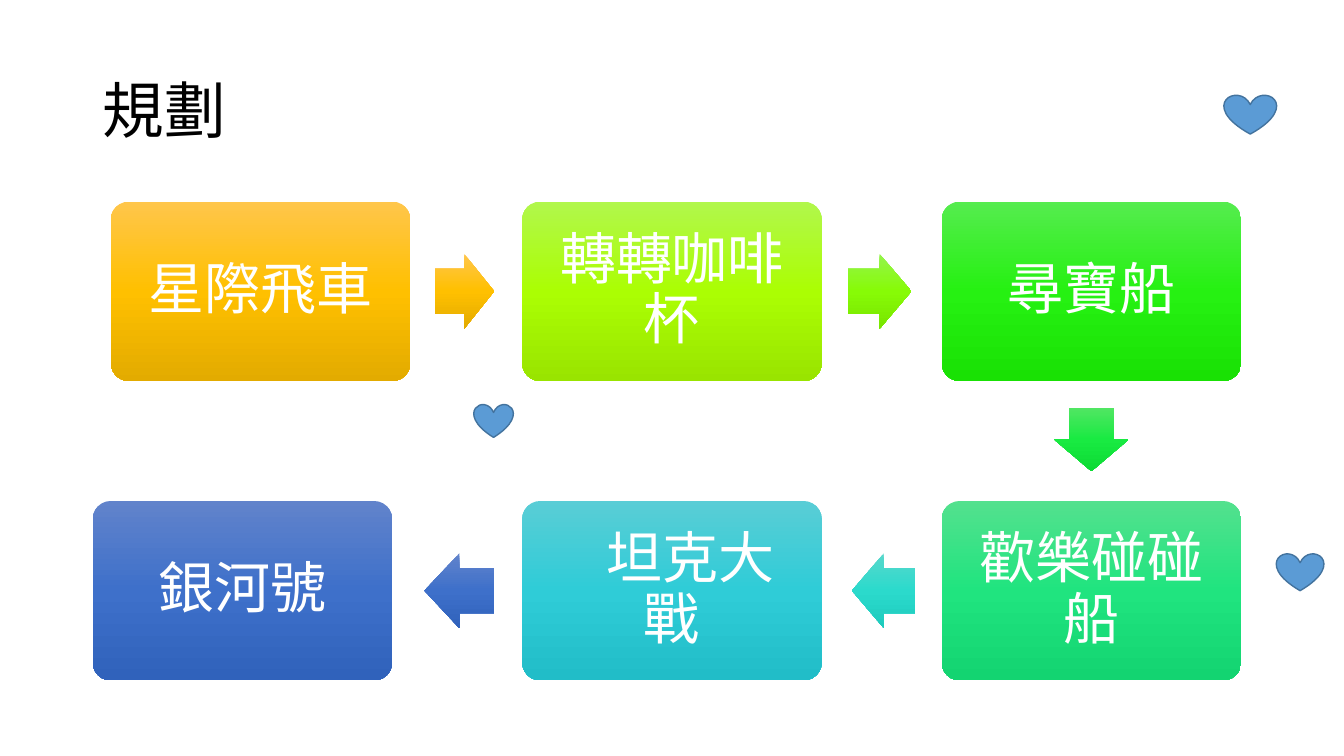
"""Build a slide showing the planned route through six amusement rides."""
from copy import deepcopy

from pptx import Presentation
from pptx.dml.color import RGBColor
from pptx.enum.shapes import MSO_SHAPE
from pptx.enum.text import MSO_ANCHOR, PP_ALIGN
from pptx.oxml.ns import qn
from pptx.util import Inches, Pt

ROUNDED = MSO_SHAPE.ROUNDED_RECTANGLE
ARROW = MSO_SHAPE.RIGHT_ARROW
HEART = MSO_SHAPE.HEART
MIDDLE = MSO_ANCHOR.MIDDLE
CENTER = PP_ALIGN.CENTER

FONT = "Calibri"
BLACK = RGBColor(0x00, 0x00, 0x00)
WHITE = RGBColor(0xFF, 0xFF, 0xFF)
HEART_FILL = RGBColor(0x5B, 0x9B, 0xD5)
HEART_LINE = RGBColor(0x43, 0x73, 0x9E)
AMBER = (RGBColor(0xFF, 0xC6, 0x4B), RGBColor(0xFF, 0xC0, 0x00), RGBColor(0xE3, 0xAB, 0x00))
LIME = (RGBColor(0xB1, 0xF7, 0x4C), RGBColor(0xAB, 0xFE, 0x03), RGBColor(0x99, 0xE4, 0x00))
LEAF = (RGBColor(0x94, 0xF4, 0x4C), RGBColor(0x87, 0xFB, 0x06), RGBColor(0x78, 0xE5, 0x00))
GREEN = (RGBColor(0x55, 0xEC, 0x4E), RGBColor(0x26, 0xF1, 0x12), RGBColor(0x19, 0xE1, 0x04))
EMERALD = (RGBColor(0x51, 0xE6, 0x63), RGBColor(0x19, 0xEA, 0x42), RGBColor(0x0C, 0xDB, 0x34))
MINT = (RGBColor(0x53, 0xE1, 0x8E), RGBColor(0x20, 0xE4, 0x7F), RGBColor(0x13, 0xD4, 0x71))
TEAL = (RGBColor(0x58, 0xD8, 0xCC), RGBColor(0x2B, 0xDA, 0xCC), RGBColor(0x1E, 0xCB, 0xBD))
CYAN = (RGBColor(0x59, 0xCD, 0xD6), RGBColor(0x2F, 0xCC, 0xD7), RGBColor(0x21, 0xBD, 0xC8))
BLUE = (RGBColor(0x61, 0x83, 0xCB), RGBColor(0x3E, 0x70, 0xCA), RGBColor(0x30, 0x62, 0xBB))

TOP_ROW, BOTTOM_ROW = 2, 4.97
MIDDLE_COLUMN, RIGHT_COLUMN = 5.18, 9.34
RIDE_WIDTH, RIDE_HEIGHT = 2.97, 1.78
ARROW_HEIGHT = 0.74

prs = Presentation()
prs.slide_width = Inches(13.33)
prs.slide_height = Inches(7.5)
slide = prs.slides.add_slide(prs.slide_layouts[6])


def add_gradient_shape(preset, left, top, width, height, colors):
    """Add an unlined shape shaded from top to bottom, whatever its rotation."""
    shape = slide.shapes.add_shape(
        preset, Inches(left), Inches(top), Inches(width), Inches(height))
    shape.shadow.inherit = False
    shape.line.fill.background()
    shape.fill.gradient()
    shape.fill.gradient_angle = 270
    gradient = shape.element.spPr.find(qn("a:gradFill"))
    gradient.set("rotWithShape", "0")
    stop_list = gradient.find(qn("a:gsLst"))
    stop_list.append(deepcopy(stop_list[0]))
    for stop, position, color in zip(shape.fill.gradient_stops, (0, 0.5, 1), colors):
        stop.position = position
        stop.color.rgb = color
    return shape


def write_text(frame, text, size, color):
    """Write one vertically centred paragraph and return it."""
    frame.word_wrap = True
    frame.vertical_anchor = MIDDLE
    paragraph = frame.paragraphs[0]
    paragraph.text = text
    paragraph.line_spacing = 0.9
    paragraph.font.name = FONT
    paragraph.font.size = Pt(size)
    paragraph.font.color.rgb = color
    return paragraph


title = slide.shapes.add_textbox(Inches(0.92), Inches(0.4), Inches(11.5), Inches(1.45))
write_text(title.text_frame, "規劃", 44, BLACK)

rides = [
    ("星際飛車", 1.1, TOP_ROW, AMBER, 0),
    ("轉轉咖啡杯", MIDDLE_COLUMN, TOP_ROW, LIME, 0),
    ("尋寶船", RIGHT_COLUMN, TOP_ROW, GREEN, 0),
    ("歡樂碰碰船", RIGHT_COLUMN, BOTTOM_ROW, MINT, 0),
    ("坦克大戰", MIDDLE_COLUMN, BOTTOM_ROW, CYAN, 0.36),
    ("銀河號", 0.92, BOTTOM_ROW, BLUE, 0),
]
for name, left, top, colors, indent in rides:
    ride = add_gradient_shape(ROUNDED, left, top, RIDE_WIDTH, RIDE_HEIGHT, colors)
    ride.adjustments[0] = 0.1
    frame = ride.text_frame
    frame.margin_left = frame.margin_right = Inches(0.22)
    frame.margin_top = frame.margin_bottom = Inches(0.22)
    label = write_text(frame, name, 40, WHITE)
    label.alignment = CENTER
    if indent:
        label._p.get_or_add_pPr().set("indent", str(Inches(indent)))

arrows = [
    (4.31, 2.52, 0.59, 0, AMBER),
    (8.41, 2.52, 0.63, 0, LEAF),
    (10.51, 3.99, 0.63, 90, EMERALD),
    (8.45, 5.49, 0.63, 180, TEAL),
    (4.21, 5.49, 0.69, 180, BLUE),
]
for left, top, width, rotation, colors in arrows:
    arrow = add_gradient_shape(ARROW, left, top, width, ARROW_HEIGHT, colors)
    arrow.adjustments[0] = 0.6
    arrow.adjustments[1] = 0.5
    arrow.rotation = rotation

hearts = [(4.7, 4.01, 0.39, 0.33), (12.66, 5.49, 0.47, 0.37), (12.14, 0.94, 0.52, 0.39)]
for bounds in hearts:
    heart = slide.shapes.add_shape(HEART, *map(Inches, bounds))
    heart.shadow.inherit = False
    heart.fill.solid()
    heart.fill.fore_color.rgb = HEART_FILL
    heart.line.color.rgb = HEART_LINE
    heart.line.width = Pt(1)

prs.save("out.pptx")
